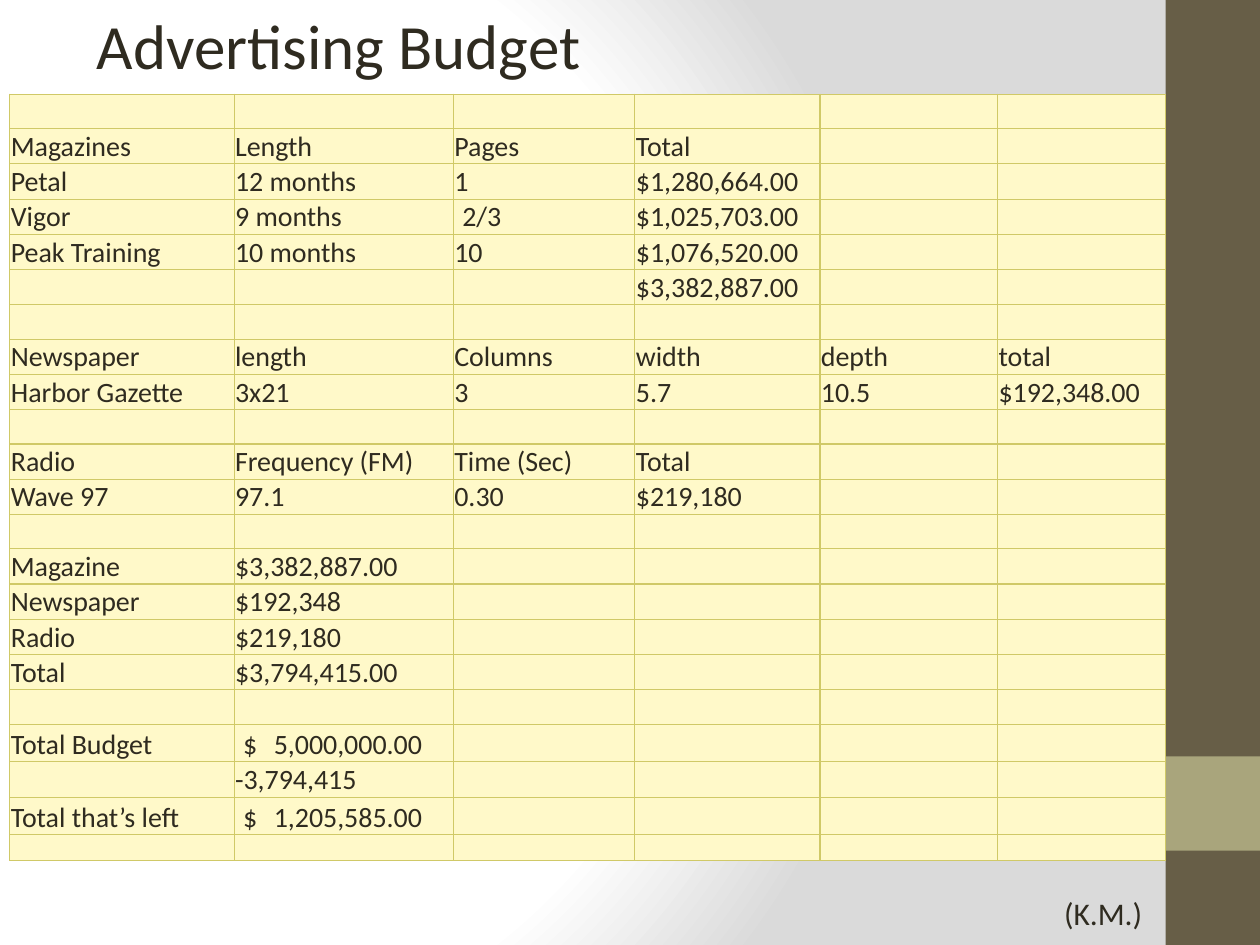
from lxml.etree import SubElement
from pptx import Presentation
from pptx.dml.color import RGBColor
from pptx.enum.shapes import MSO_SHAPE
from pptx.enum.text import MSO_ANCHOR, PP_ALIGN
from pptx.oxml import parse_xml
from pptx.oxml.ns import nsdecls, qn
from pptx.util import Cm, Pt

COLORS = {
    "text": "2F2B20",
    "bar": "675E47",
    "accent": "A9A57C",
    "cell": "FFF9C9",
    "border": "D0C967",
    "white": "FFFFFF",
    "shade": "DADADA",
}
FONT = "Calibri"
BODY_SIZE = 16
COLUMN_WIDTHS = [4.52, 4.42, 3.66, 3.73, 3.58, 3.38]
ROW_HEIGHT = 0.64
SPECIAL_HEIGHTS = {18: 0.76, 20: 0.76, 21: 0.48}
INDENTED = {"2/3", "$\t5,000,000.00", "$\t1,205,585.00"}
BUDGET_ROWS = [
    [],
    ["Magazines", "Length", "Pages", "Total"],
    ["Petal", "12 months", "1", "$1,280,664.00"],
    ["Vigor", "9 months", "2/3", "$1,025,703.00"],
    ["Peak Training", "10 months", "10", "$1,076,520.00"],
    ["", "", "", "$3,382,887.00"],
    [],
    ["Newspaper", "length", "Columns", "width", "depth", "total"],
    ["Harbor Gazette", "3x21", "3", "5.7", "10.5", "$192,348.00"],
    [],
    ["Radio", "Frequency (FM)", "Time (Sec)", "Total"],
    ["Wave 97", "97.1", "0.30", "$219,180"],
    [],
    ["Magazine", "$3,382,887.00"],
    ["Newspaper", "$192,348"],
    ["Radio", "$219,180"],
    ["Total", "$3,794,415.00"],
    [],
    ["Total Budget", "$\t5,000,000.00"],
    ["", "-3,794,415"],
    ["Total that’s left", "$\t1,205,585.00"],
    [],
]


def set_attributes(target, values):
    for name, value in values.items():
        setattr(target, name, value)


def write_text(paragraph, text, size):
    run = paragraph.add_run()
    run.text = text
    set_attributes(run.font, {"name": FONT, "size": Pt(size)})
    run.font.color.rgb = RGBColor.from_string(COLORS["text"])


def set_background(slide):
    """White glow from the left that fades to grey on the right."""
    slide.background.fill.solid()
    properties = slide.background.fill._xPr
    stops = "".join(
        f'<a:gs pos="{position * 1000}"><a:srgbClr val="{COLORS[name]}"/></a:gs>'
        for position, name in [(0, "white"), (75, "white"), (100, "shade")]
    )
    gradient = parse_xml(
        f'<a:gradFill {nsdecls("a")} rotWithShape="1"><a:gsLst>{stops}</a:gsLst>'
        '<a:path path="circle"><a:fillToRect l="20000" t="50000" r="100000" b="50000"/>'
        "</a:path></a:gradFill>"
    )
    properties.replace(properties.find(qn("a:solidFill")), gradient)


def add_side_bar(slide, left, top, width, height):
    square_top = top + height - 2 * width
    for color, part_top, part_height in [("bar", top, height), ("accent", square_top, width)]:
        shape = slide.shapes.add_shape(
            MSO_SHAPE.RECTANGLE, Cm(left), Cm(part_top), Cm(width), Cm(part_height)
        )
        shape.shadow.inherit = False
        shape.fill.solid()
        shape.fill.fore_color.rgb = RGBColor.from_string(COLORS[color])
        shape.line.fill.background()


def place_title(slide, left, top, width, height):
    title = slide.shapes.title
    set_attributes(
        title, {"left": Cm(left), "top": Cm(top), "width": Cm(width), "height": Cm(height)}
    )
    title.text_frame.vertical_anchor = MSO_ANCHOR.TOP
    paragraph = title.text_frame.paragraphs[0]
    paragraph.alignment = PP_ALIGN.LEFT
    write_text(paragraph, "Advertising Budget", 36)


def add_initials(slide, left, top, width, height):
    box = slide.shapes.add_textbox(Cm(left), Cm(top), Cm(width), Cm(height))
    box.text_frame.word_wrap = True
    write_text(box.text_frame.paragraphs[0], "(K.M.)", 18)


def add_borders(cell):
    properties = cell._tc.get_or_add_tcPr()
    for side in ("lnL", "lnR", "lnT", "lnB"):
        line = SubElement(properties, qn(f"a:{side}"), w=str(Pt(0.75)))
        fill = SubElement(line, qn("a:solidFill"))
        SubElement(fill, qn("a:srgbClr"), val=COLORS["border"])


def fill_cell(cell, text, empty_size):
    add_borders(cell)
    cell.fill.solid()
    cell.fill.fore_color.rgb = RGBColor.from_string(COLORS["cell"])
    set_attributes(cell, {
        "vertical_anchor": MSO_ANCHOR.BOTTOM,
        "margin_left": Cm(0.18 if text in INDENTED else 0.02),
        "margin_right": Cm(0.02),
        "margin_top": Cm(0.02 if text else 0),
        "margin_bottom": 0,
    })
    paragraph = cell.text_frame.paragraphs[0]
    if not text:
        SubElement(paragraph._p, qn("a:endParaRPr"), sz=str(empty_size * 100))
        return
    if "\t" in text:
        tabs = SubElement(paragraph._p.get_or_add_pPr(), qn("a:tabLst"))
        SubElement(tabs, qn("a:tab"), pos=str(Cm(0.62)), algn="l")
    write_text(paragraph, text, BODY_SIZE)


def add_budget_table(slide, left, top):
    heights = [SPECIAL_HEIGHTS.get(index, ROW_HEIGHT) for index in range(len(BUDGET_ROWS))]
    table = slide.shapes.add_table(
        len(heights), len(COLUMN_WIDTHS), Cm(left), Cm(top),
        Cm(sum(COLUMN_WIDTHS)), Cm(sum(heights)),
    ).table
    set_attributes(table, {"first_row": False, "horz_banding": False})
    for column, width in zip(table.columns, COLUMN_WIDTHS):
        column.width = Cm(width)
    for row, height, texts in zip(table.rows, heights, BUDGET_ROWS):
        row.height = Cm(height)
        empty_size = BODY_SIZE if height >= ROW_HEIGHT else 12
        for index, cell in enumerate(row.cells):
            text = texts[index] if index < len(texts) else ""
            fill_cell(cell, text, empty_size)


def build_budget_slide(presentation):
    slide = presentation.slides.add_slide(presentation.slide_layouts[5])
    set_background(slide)
    add_side_bar(slide, 23.5, 0, 1.9, 19.05)
    add_budget_table(slide, 0.2, 1.9)
    place_title(slide, 1.7, 0, 21.8, 1.8)
    add_initials(slide, 21.2, 17.9, 2.25, 1.02)


def main():
    presentation = Presentation()
    set_attributes(presentation, {"slide_width": Cm(25.4), "slide_height": Cm(19.05)})
    build_budget_slide(presentation)
    presentation.save("out.pptx")


if __name__ == "__main__":
    main()
